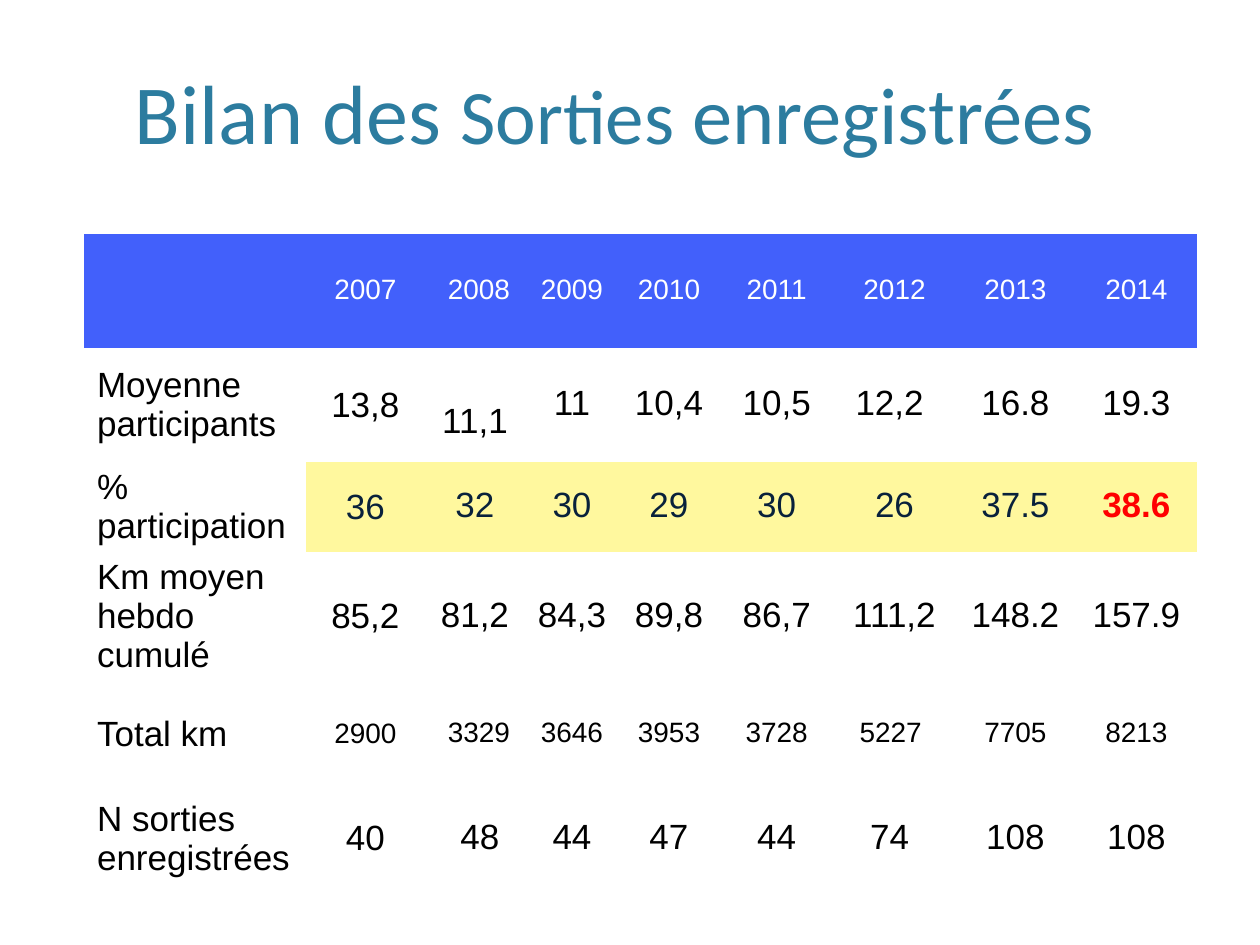
from dataclasses import dataclass

from pptx import Presentation
from pptx.dml.color import RGBColor
from pptx.enum.text import MSO_ANCHOR, PP_ALIGN
from pptx.oxml.ns import qn
from pptx.util import Inches, Pt

LEFT, CENTER = PP_ALIGN.LEFT, PP_ALIGN.CENTER
MIDDLE, BOTTOM = MSO_ANCHOR.MIDDLE, MSO_ANCHOR.BOTTOM
PLAIN_TABLE_STYLE = "{2D5ABB26-0587-4C30-8999-92F81FD0307C}"


@dataclass(frozen=True)
class Theme:
    title_font: str = "Calibri"
    table_font: str = "Arial"
    title: str = "2C7C9F"
    header_fill: str = "4260FB"
    header_text: str = "FFFFFF"
    body_text: str = "000000"
    band_fill: str = "FFF89E"
    band_text: str = "09213B"
    record: str = "FF0000"
    small: int = 16
    large: int = 20


THEME = Theme()
SLIDE_WIDTH, SLIDE_HEIGHT = 10, 7.5
TITLE_SPANS = [("Bilan des ", 48), ("Sorties ", 44), ("enregistrées", 46)]
COLUMNS = [1.76, 0.94, 0.8, 0.74, 0.8, 0.91, 0.96, 0.96, 0.96]
ROWS = [0.9, 0.91, 0.71, 1.03, 0.83, 0.83]
HEADER_ROW, MEAN_ROW, SHARE_ROW, TOTAL_ROW = 0, 1, 2, 4
FIRST_YEAR, SECOND_YEAR, LAST_YEAR = 1, 2, 8
DATA = [
    ["", "2007", " 2008", "2009", "2010", "2011", "2012", "2013", "2014"],
    ["Moyenne participants", "13,8", "11,1", "11", "10,4", "10,5", "12,2 ", "16.8", "19.3"],
    ["% participation", "36", "32", "30", "29", "30", "26", "37.5", "38.6"],
    ["Km moyen hebdo cumulé", "85,2", "81,2", "84,3", "89,8", "86,7", "111,2", "148.2", "157.9"],
    ["Total km", "2900", " 3329", "3646", "3953", "3728", "5227 ", "7705", "8213"],
    ["N sorties enregistrées", "40", " 48", "44", "47", "44", "74 ", "108", "108"],
]


def apply_format(target, values):
    for name, value in values.items():
        setattr(target, name, value)


def add_span(para, text, color, **font_values):
    span = para.add_run()
    span.text = text
    apply_format(span.font, font_values)
    span.font.color.rgb = RGBColor.from_string(color)


def add_title(page):
    box = page.shapes.add_textbox(
        0, Inches(0.28), Inches(SLIDE_WIDTH * 0.975), Inches(SLIDE_HEIGHT * 0.14))
    apply_format(box.text_frame, {"word_wrap": True, "vertical_anchor": BOTTOM})
    para = box.text_frame.paragraphs[0]
    para.alignment = CENTER
    for text, size in TITLE_SPANS:
        add_span(para, text, THEME.title, name=THEME.title_font, size=Pt(size))


def cell_style(row, column):
    style = {"fill": None, "color": THEME.body_text, "size": THEME.large, "bold": False}
    if row == HEADER_ROW:
        style.update(fill=THEME.header_fill, color=THEME.header_text, size=THEME.small)
    elif column >= FIRST_YEAR and row == SHARE_ROW:
        style.update(fill=THEME.band_fill, color=THEME.band_text)
        if column == LAST_YEAR:
            style.update(color=THEME.record, bold=True)
    elif column >= FIRST_YEAR and row == TOTAL_ROW:
        style.update(size=THEME.small)
    return style


def cell_margins(row, column):
    side, top, bottom = (0.08, 0.05, 0.05) if column >= FIRST_YEAR else (0.1, 0, 0)
    if (row, column) == (MEAN_ROW, SECOND_YEAR):
        top = 0.33
    return {"margin_left": Inches(side), "margin_right": Inches(side),
            "margin_top": Inches(top), "margin_bottom": Inches(bottom)}


def fill_cell(cell, text, row, column):
    style = cell_style(row, column)
    apply_format(cell, {"vertical_anchor": MIDDLE, **cell_margins(row, column)})
    if style["fill"]:
        cell.fill.solid()
        cell.fill.fore_color.rgb = RGBColor.from_string(style["fill"])
    else:
        cell.fill.background()
    para = cell.text_frame.paragraphs[0]
    para.alignment = CENTER if column >= FIRST_YEAR else LEFT
    if column > FIRST_YEAR or row == HEADER_ROW:
        para.line_spacing = 0.9
    if text:
        add_span(para, text, style["color"], name=THEME.table_font,
                 size=Pt(style["size"]), bold=style["bold"])


def add_results_table(page):
    frame = page.shapes.add_table(
        len(ROWS), len(COLUMNS), Inches(0.67), Inches(1.86),
        Inches(sum(COLUMNS)), Inches(sum(ROWS)))
    table = frame.table
    apply_format(table, {"first_row": False, "horz_banding": False})
    table._tbl.tblPr.find(qn("a:tableStyleId")).text = PLAIN_TABLE_STYLE
    for column, width in zip(table.columns, COLUMNS):
        column.width = Inches(width)
    for row, height in zip(table.rows, ROWS):
        row.height = Inches(height)
    for row, texts in enumerate(DATA):
        for column, text in enumerate(texts):
            fill_cell(table.cell(row, column), text, row, column)


def main():
    deck = Presentation()
    apply_format(deck, {"slide_width": Inches(SLIDE_WIDTH),
                        "slide_height": Inches(SLIDE_HEIGHT)})
    page = deck.slides.add_slide(deck.slide_layouts[6])
    add_title(page)
    add_results_table(page)
    deck.save("out.pptx")


if __name__ == "__main__":
    main()
